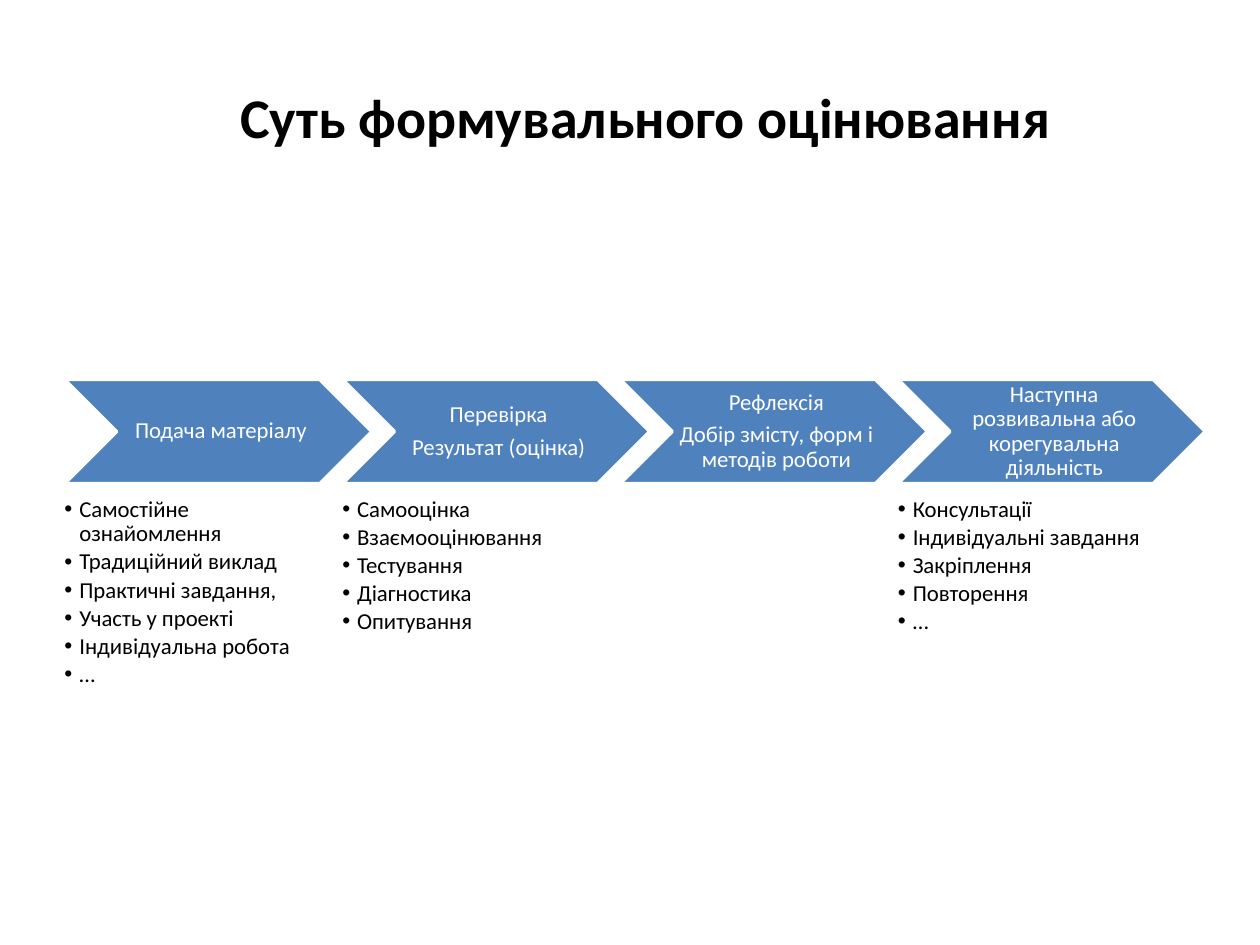
from lxml import etree
from pptx import Presentation
from pptx.dml.color import RGBColor
from pptx.enum.shapes import MSO_SHAPE
from pptx.enum.text import MSO_ANCHOR, MSO_AUTO_SIZE, PP_ALIGN
from pptx.oxml.ns import qn
from pptx.util import Cm, Pt

BLUE = RGBColor(0x4F, 0x81, 0xBD)
WHITE = RGBColor(0xFF, 0xFF, 0xFF)
BLACK = RGBColor(0, 0, 0)
CHEVRON = MSO_SHAPE.CHEVRON
CENTER, LEFT = PP_ALIGN.CENTER, PP_ALIGN.LEFT
TOP, MIDDLE = MSO_ANCHOR.TOP, MSO_ANCHOR.MIDDLE
NO_FIT = MSO_AUTO_SIZE.NONE
COMPARISON_LAYOUT = 4

STAGES = [
    (["Подача матеріалу"],
     ["Самостійне ознайомлення", "Традиційний виклад", "Практичні завдання,",
      "Участь у проекті", "Індивідуальна робота", "…"]),
    (["Перевірка", "Результат (оцінка)"],
     ["Самооцінка", "Взаємооцінювання", "Тестування", "Діагностика", "Опитування"]),
    (["Рефлексія", "Добір змісту, форм і методів роботи"], []),
    (["Наступна розвивальна або корегувальна діяльність"],
     ["Консультації", "Індивідуальні завдання", "Закріплення", "Повторення", "…"]),
]


def write(frame, lines, size=13, color=BLACK, bold=False, align=LEFT, anchor=TOP,
          margins=(0, 0, 0, 0), line_spacing=0.9, after=0, bullet=None):
    """Fill a text frame with one paragraph per line in the given format."""
    frame.word_wrap = True
    frame.auto_size = NO_FIT
    frame.vertical_anchor = anchor
    (frame.margin_left, frame.margin_top,
     frame.margin_right, frame.margin_bottom) = (Cm(m) for m in margins)
    frame.text = "\n".join(lines)
    for paragraph in frame.paragraphs:
        paragraph.alignment = align
        paragraph.line_spacing = line_spacing
        paragraph.space_before = Pt(0)
        paragraph.space_after = Pt(after)
        font = paragraph.runs[0].font
        font.name, font.size, font.bold = "Calibri", Pt(size), bold
        font.color.rgb = color
        if bullet:
            paragraph.level = 1
            properties = paragraph._p.get_or_add_pPr()
            properties.set("marL", str(Cm(0.3)))
            properties.set("indent", str(-Cm(0.3)))
            etree.SubElement(properties, qn("a:buFont"), typeface="Arial")
            etree.SubElement(properties, qn("a:buChar"), char=bullet)


class ProcessSlide:
    """Holds the style and the current slide, and adds its elements."""

    def __init__(self, deck):
        self.slide = deck.slides.add_slide(deck.slide_layouts[COMPARISON_LAYOUT])
        self.free_bodies = list(self.slide.placeholders)[1:]

    def place(self, holder, left, top, width, height):
        holder.left, holder.top = Cm(left), Cm(top)
        holder.width, holder.height = Cm(width), Cm(height)

    def title(self, heading):
        holder = self.slide.shapes.title
        self.place(holder, 2.31, 1.52, 21.41, 1.63)
        write(holder.text_frame, [heading], size=32, bold=True, align=CENTER,
              anchor=MIDDLE, margins=(0.25, 0.13, 0.25, 0.13), line_spacing=1)

    def stage(self, left, labels):
        arrow = self.slide.shapes.add_shape(
            CHEVRON, Cm(left), Cm(7.65), Cm(6.2), Cm(2.1))
        arrow.shadow.inherit = False
        arrow.fill.solid()
        arrow.fill.fore_color.rgb = BLUE
        arrow.line.color.rgb = WHITE
        arrow.line.width = Pt(2)
        write(arrow.text_frame, labels, color=WHITE, align=CENTER, anchor=MIDDLE,
              margins=(0.15, 0.05, 0.05, 0.05), after=4.5)

    def activities(self, left, items):
        holder = self.free_bodies.pop(0)
        self.place(holder, left, 10.03, 4.95, 4)
        write(holder.text_frame, items, after=2, bullet="•")

    def remove_empty(self):
        for holder in self.free_bodies:
            holder.element.getparent().remove(holder.element)


def main():
    deck = Presentation()
    deck.slide_width, deck.slide_height = Cm(25.4), Cm(19.05)
    process = ProcessSlide(deck)
    process.title("Суть формувального оцінювання")
    for position, (labels, items) in enumerate(STAGES):
        left = 1.3 + 5.6 * position
        process.stage(left, labels)
        if items:
            process.activities(left, items)
    process.remove_empty()
    deck.save("out.pptx")


if __name__ == "__main__":
    main()
